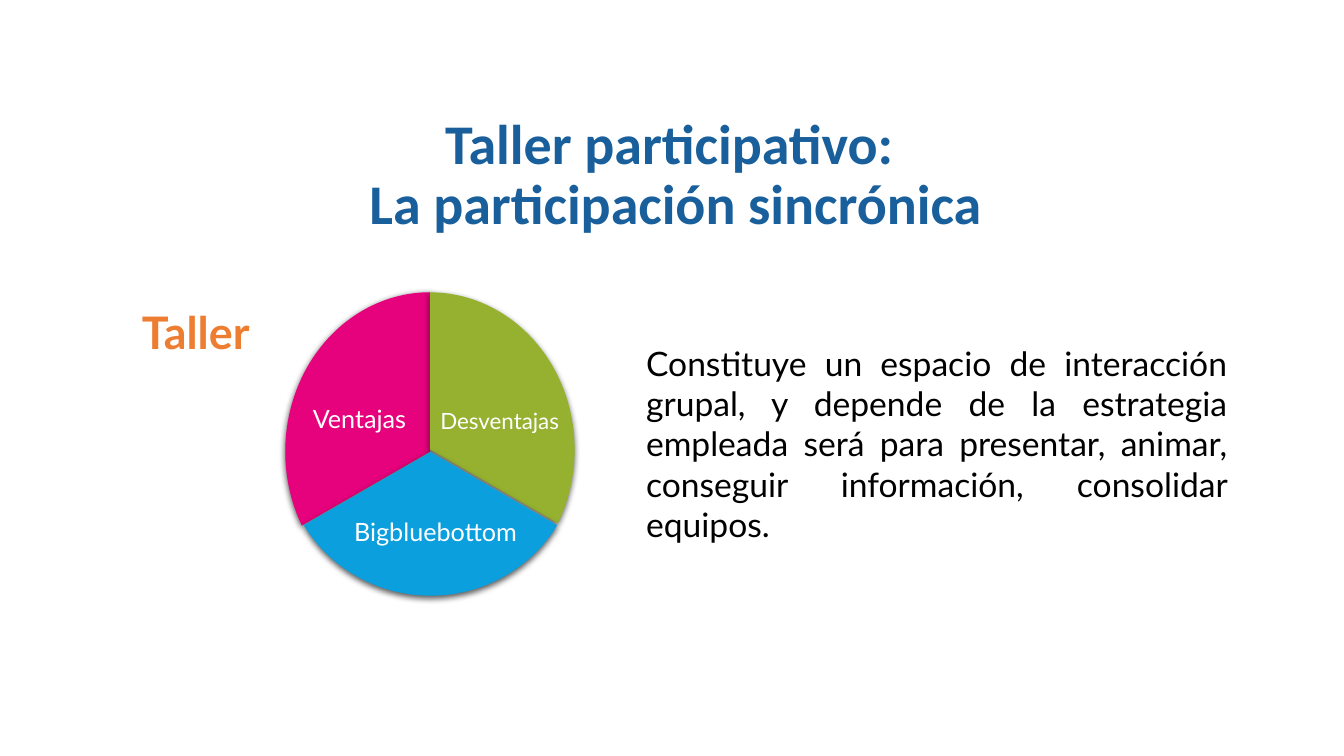
from lxml.etree import SubElement
from pptx import Presentation
from pptx.dml.color import RGBColor
from pptx.enum.shapes import MSO_SHAPE
from pptx.enum.text import MSO_ANCHOR, PP_ALIGN
from pptx.oxml.ns import qn
from pptx.util import Inches, Pt


def color(code):
    return RGBColor.from_string(code)


def style(item, form):
    for key, value in form.items():
        setattr(item, key, value)


def write(shape, text, size, tint, font="Lato", bold=False, frame=None, para=None):
    body = shape.text_frame
    style(body, {"word_wrap": True, **(frame or {})})
    line = body.paragraphs[0]
    line.text = text
    style(line, para or {})
    style(line.font, {"name": font, "size": Pt(size), "bold": bold})
    line.font.color.rgb = color(tint)


def block(slide, box):
    return slide.shapes.add_textbox(*map(Inches, box))


def solid(slide, kind, box, tint):
    shape = slide.shapes.add_shape(kind, *map(Inches, box))
    shape.shadow.inherit = False
    shape.fill.solid()
    shape.fill.fore_color.rgb = color(tint)
    shape.line.fill.background()
    return shape


def shade(shape):
    effects = shape._element.spPr.find(qn("a:effectLst"))
    outer = SubElement(effects, qn("a:outerShdw"), blurRad=str(Pt(4.5)),
                       dist=str(Pt(1.5)), dir="5400000", rotWithShape="0")
    black = SubElement(outer, qn("a:srgbClr"), val="000000")
    SubElement(black, qn("a:alpha"), val="63000")


def title(slide, box):
    write(block(slide, box), "Taller participativo: \vLa participación sincrónica",
          40, "185F9B", "Calibri", True,
          {"vertical_anchor": MSO_ANCHOR.BOTTOM, "margin_bottom": Inches(0.66)},
          {"alignment": PP_ALIGN.CENTER, "line_spacing": 0.9})


def wheel(slide, box):
    left, top = box
    # Wedge box, start angle, colour, then label box, text, size and inset
    parts = [
        ((0.02, 0, 2.87, 3.16), 150, "E6017D",
         (0.23, 0.76, 1.05, 1.02), "Ventajas ", 18, 0.03),
        ((0.02, 0, 2.87, 3.12), 270, "95B12F",
         (1.52, 0.78, 1.31, 1.02), "Desventajas ", 16, 0.02),
        ((0, 0.16, 2.92, 2.85), 30, "0C9FDE",
         (0.62, 2.14, 1.78, 0.5), "Bigbluebottom", 18, 0.03),
    ]

    def place(area):
        x, y, wide, high = area
        return left + x, top + y, wide, high

    for area, start, tint, spot, text, size, inset in parts:
        # Each wedge spans a third of a turn; 0.6 converts degrees
        wedge = solid(slide, MSO_SHAPE.PIE, place(area), tint)
        wedge.adjustments[0] = start * 0.6
        wedge.adjustments[1] = (start + 120) % 360 * 0.6
        shade(wedge)
        sides = ("left", "right", "top", "bottom")
        frame = {f"margin_{side}": Inches(inset) for side in sides}
        write(block(slide, place(spot)), text, size, "FFFFFF",
              frame={**frame, "vertical_anchor": MSO_ANCHOR.MIDDLE},
              para={"alignment": PP_ALIGN.CENTER, "line_spacing": 0.9})


def detail(slide, box):
    left, top = box
    # Heading
    write(block(slide, (left, top, 3.27, 0.81)), "Taller", 32, "ED7D31", bold=True,
          frame={"margin_top": Inches(0.01)}, para={"line_spacing": 1.1})
    # Definition
    write(block(slide, (left + 5, top + 0.39, 5.96, 2.12)),
          "Constituye un espacio de interacción grupal, y depende de la "
          "estrategia empleada será para presentar, animar, conseguir "
          "información, consolidar equipos.", 24, "000000",
          para={"alignment": PP_ALIGN.JUSTIFY})


def main():
    deck = Presentation()
    style(deck, {"slide_width": Inches(13.33), "slide_height": Inches(7.5)})
    slide = deck.slides.add_slide(deck.slide_layouts[6])
    title(slide, (0.86, 1.31, 11.68, 1.7))
    wheel(slide, (2.81, 2.9))
    detail(slide, (1.31, 2.96))
    deck.save("out.pptx")


if __name__ == "__main__":
    main()
